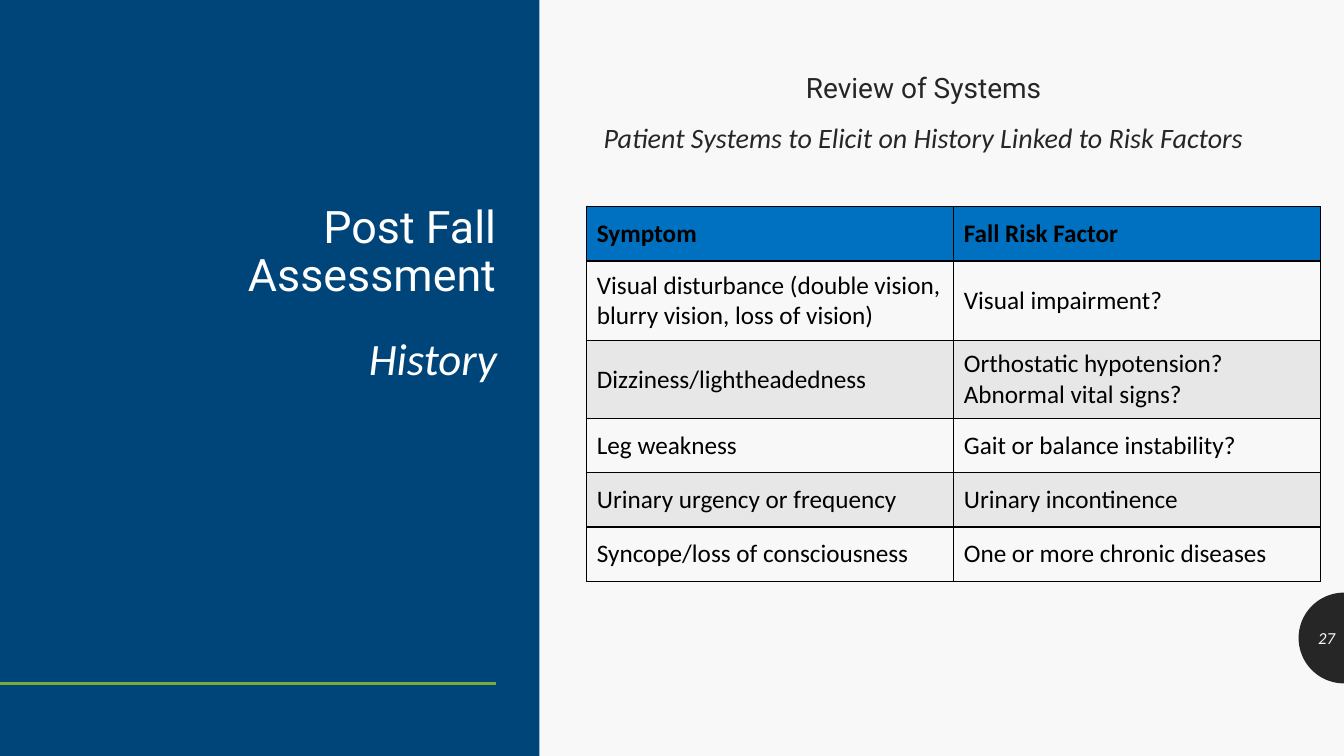
"""Build the Post Fall Assessment history slide."""
import math

from lxml import etree
from pptx import Presentation
from pptx.dml.color import RGBColor
from pptx.enum import shapes as sh, text as tx
from pptx.oxml import ns
from pptx.util import Inches, Pt

HUES = {"page": "F8F8F8", "navy": "004579", "green": "78AC36", "dark": "262626",
        "white": "FFFFFF", "black": "000000", "head": "0070C0", "band": "E7E7E7"}
RIGHT, MID = tx.PP_ALIGN.RIGHT, tx.PP_ALIGN.CENTER
TOP, HALF, LOW = tx.MSO_ANCHOR.TOP, tx.MSO_ANCHOR.MIDDLE, tx.MSO_ANCHOR.BOTTOM


def hue(name):
    return RGBColor.from_string(HUES[name])


def write(box, lines, align, anchor, color, space=1.0):
    frame = slide.shapes.add_textbox(*map(Inches, box)).text_frame
    frame.word_wrap = True
    frame.vertical_anchor = anchor
    for i, (words, face, size, slant) in enumerate(lines):
        para = frame.paragraphs[0] if i == 0 else frame.add_paragraph()
        para.text = words
        para.alignment = align
        para.line_spacing = space
        para.space_before = Pt(9 if i else 0)
        font = para.runs[0].font
        font.name, font.size, font.italic = face, Pt(size), slant
        font.color.rgb = hue(color)


deck = Presentation()
deck.slide_width, deck.slide_height = Inches(13.33), Inches(7.5)
slide = deck.slides.add_slide(deck.slide_layouts[6])
slide.background.fill.solid()
slide.background.fill.fore_color.rgb = hue("page")

arc = [(Inches(13.33 + 0.45 * math.cos(math.radians(a))),
        Inches(6.33 + 0.45 * math.sin(math.radians(a)))) for a in range(90, 271, 4)]
arc.append((Inches(13.33), Inches(5.88)))
path = slide.shapes.build_freeform(*arc[0])
path.add_line_segments(arc[1:], close=True)
badge = path.convert_to_shape()
panel = slide.shapes.add_shape(sh.MSO_SHAPE.RECTANGLE, 0, 0, Inches(5.35), Inches(7.5))
for shape, color in ((badge, "dark"), (panel, "navy")):
    shape.shadow.inherit = False
    shape.fill.solid()
    shape.fill.fore_color.rgb = hue(color)
    shape.line.fill.background()

rule = slide.shapes.add_connector(sh.MSO_CONNECTOR.STRAIGHT, 0, Inches(6.78),
                                  Inches(4.92), Inches(6.78))
rule.line.color.rgb = hue("green")
rule.line.width = Pt(2)
etree.SubElement(rule._element.spPr, ns.qn("a:effectLst"))

write((0.83, 0.61, 4.19, 2.43), [("Post Fall Assessment", "Roboto", 32, False)],
      RIGHT, LOW, "white", 0.9)
write((12.89, 6.13, 0.45, 0.4), [("27", "Calibri", 12, True)], RIGHT, HALF, "page")
write((0.83, 3.17, 4.2, 3.12), [("History", "Calibri", 32, True)],
      RIGHT, TOP, "white", 1.12)
write((5.82, 0.61, 6.68, 5.68),
      [("Review of Systems", "Roboto", 20, False),
       ("Patient Systems to Elicit on History Linked to Risk Factors", "Calibri", 20, True)],
      MID, TOP, "dark", 1.12)

rows = [
    ("Symptom", "Fall Risk Factor"),
    ("Visual disturbance (double vision, blurry vision, loss of vision)",
     "Visual impairment?"),
    ("Dizziness/lightheadedness", "Orthostatic hypotension?\nAbnormal vital signs?"),
    ("Leg weakness", "Gait or balance instability?"),
    ("Urinary urgency or frequency", "Urinary incontinence"),
    ("Syncope/loss of consciousness", "One or more chronic diseases"),
]
highs = [0.54, 0.79, 0.77, 0.54, 0.54, 0.54]
grid = slide.shapes.add_table(len(rows), 2, Inches(5.82), Inches(2.05),
                              Inches(7.28), Inches(sum(highs))).table
for r, row in enumerate(rows):
    grid.rows[r].height = Inches(highs[r])
    for c, words in enumerate(row):
        cell = grid.cell(r, c)
        cell.text_frame.text = words
        cell.vertical_anchor = HALF
        for para in cell.text_frame.paragraphs:
            font = para.runs[0].font
            font.name, font.size, font.bold = "Calibri", Pt(18), r == 0
            font.color.rgb = hue("black")
        props = cell._tc.get_or_add_tcPr()
        for side in "LRTB":
            edge = etree.SubElement(props, ns.qn(f"a:ln{side}"), w=str(Pt(1)))
            fill = etree.SubElement(edge, ns.qn("a:solidFill"))
            etree.SubElement(fill, ns.qn("a:srgbClr"), val=HUES["black"])
        cell.fill.solid()
        cell.fill.fore_color.rgb = hue("head" if r == 0 else "page" if r % 2 else "band")

deck.save("out.pptx")
